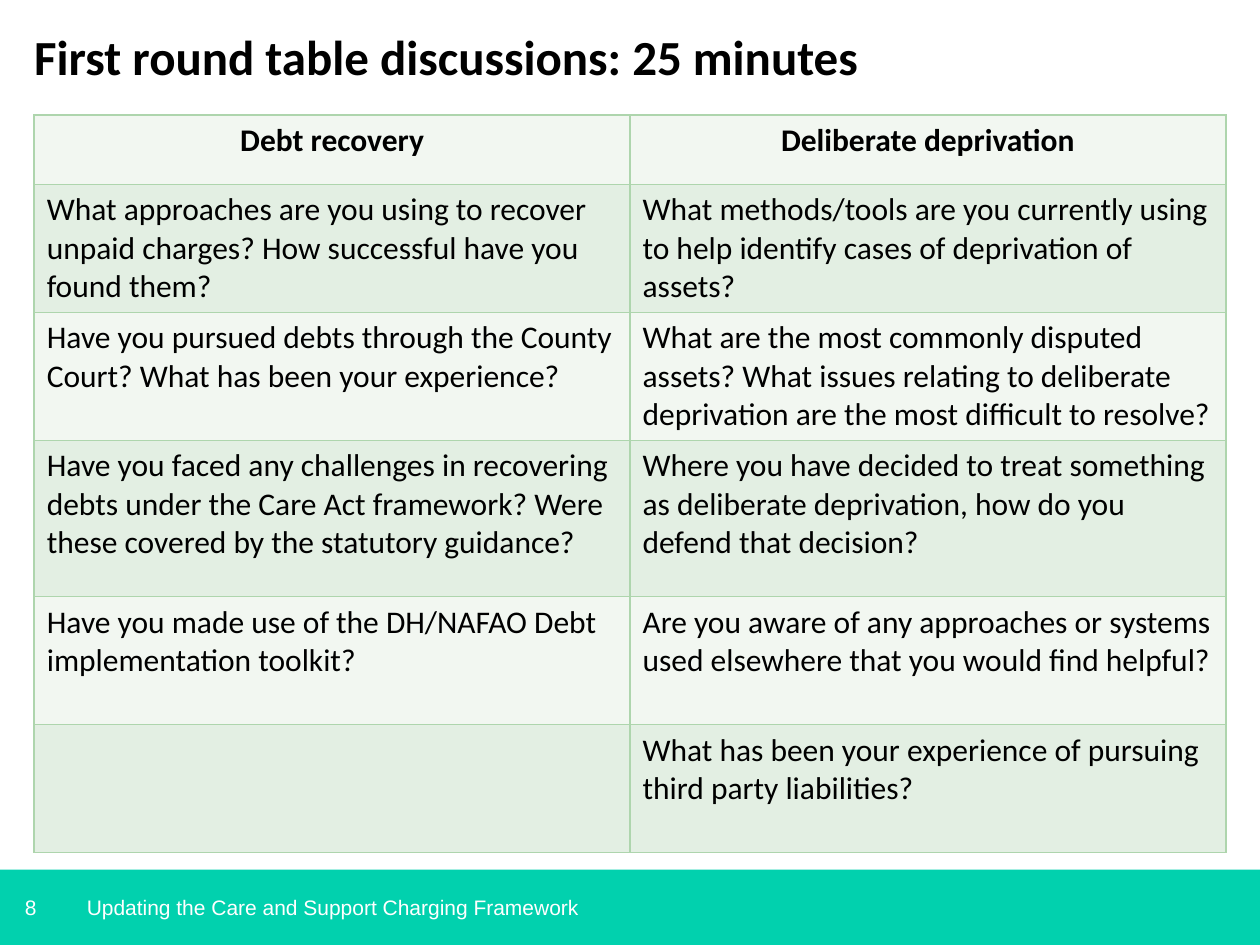
"""Build the discussion slide with its table of questions and footer band."""
from lxml import etree
from pptx import Presentation
from pptx.dml import color
from pptx.enum import shapes, text
from pptx.oxml import ns
from pptx.util import Cm, Pt

COLOURS = {
    "band": "01D1AE", "light": "F2F7F1", "shade": "E3EFE3",
    "border": "AED5AD", "ink": "000000", "white": "FFFFFF",
}
TITLE = {"name": "Calibri", "size": Pt(28), "bold": True}
HEADING = {"name": "Calibri", "size": Pt(18), "bold": True}
QUESTION = {"name": "Calibri", "size": Pt(18), "bold": False}
FOOTER = {"name": "Arial", "size": Pt(12)}


def write(paragraph, wording, style, colour):
    paragraph.text = wording
    for attribute, value in style.items():
        setattr(paragraph.font, attribute, value)
    paragraph.font.color.rgb = color.RGBColor.from_string(COLOURS[colour])


def add_border(cell):
    properties = cell._tc.get_or_add_tcPr()
    for side in ("lnL", "lnR", "lnT", "lnB"):
        line = etree.SubElement(properties, ns.qn(f"a:{side}"), w=str(Pt(1)))
        fill = etree.SubElement(line, ns.qn("a:solidFill"))
        etree.SubElement(fill, ns.qn("a:srgbClr"), val=COLOURS["border"])


deck = Presentation()
deck.slide_width, deck.slide_height = Cm(25.4), Cm(19.05)
slide = deck.slides.add_slide(deck.slide_layouts[6])

band = slide.shapes.add_shape(
    shapes.MSO_SHAPE.RECTANGLE, 0, Cm(17.53), deck.slide_width, Cm(1.52))
band.shadow.inherit = False
band.fill.solid()
band.fill.fore_color.rgb = color.RGBColor.from_string(COLOURS["band"])
band.line.fill.background()

top, middle = text.MSO_ANCHOR.TOP, text.MSO_ANCHOR.MIDDLE
labels = [
    ("8", 0.5, 17.53, 1, 1.52, middle, FOOTER, "white"),
    ("Updating the Care and Support Charging Framework",
     1.75, 17.53, 21.9, 1.52, middle, FOOTER, "white"),
    ("First round table discussions: 25 minutes",
     0.69, 0.54, 21.9, 1.93, top, TITLE, "ink"),
]
for wording, left, upper, width, height, anchor, style, colour in labels:
    label = slide.shapes.add_textbox(Cm(left), Cm(upper), Cm(width), Cm(height))
    layout = {
        "margin_left": 0, "margin_right": 0, "margin_top": 0, "margin_bottom": 0,
        "word_wrap": True, "vertical_anchor": anchor,
    }
    for attribute, value in layout.items():
        setattr(label.text_frame, attribute, value)
    write(label.text_frame.paragraphs[0], wording, style, colour)

questions = [
    ("Debt recovery", "Deliberate deprivation"),
    ("What approaches are you using to recover unpaid charges? "
     "How successful have you found them?",
     "What methods/tools are you currently using to help identify "
     "cases of deprivation of assets?"),
    ("Have you pursued debts through the County Court? "
     "What has been your experience?",
     "What are the most commonly disputed assets? What issues relating to "
     "deliberate deprivation are the most difficult to resolve?"),
    ("Have you faced any challenges in recovering debts under the Care Act "
     "framework? Were these covered by the statutory guidance?",
     "Where you have decided to treat something as deliberate deprivation, "
     "how do you defend that decision?"),
    ("Have you made use of the DH/NAFAO Debt implementation toolkit?",
     "Are you aware of any approaches or systems used elsewhere "
     "that you would find helpful?"),
    ("", "What has been your experience of pursuing third party liabilities?"),
]
row_heights = [1.4, 2.58, 2.58, 3.15, 2.58, 2.58]
discussion = slide.shapes.add_table(
    len(questions), 2, Cm(0.69), Cm(2.32), Cm(24.02), Cm(sum(row_heights))).table

for column in discussion.columns:
    column.width = Cm(12.01)
for index, (topics, height) in enumerate(zip(questions, row_heights)):
    discussion.rows[index].height = Cm(height)
    for cell, wording in zip(discussion.rows[index].cells, topics):
        add_border(cell)
        cell.fill.solid()
        cell.fill.fore_color.rgb = color.RGBColor.from_string(
            COLOURS["shade" if index % 2 else "light"])
        paragraph = cell.text_frame.paragraphs[0]
        write(paragraph, wording, QUESTION if index else HEADING, "ink")
        if index == 0:
            paragraph.alignment = text.PP_ALIGN.CENTER

deck.save("out.pptx")
